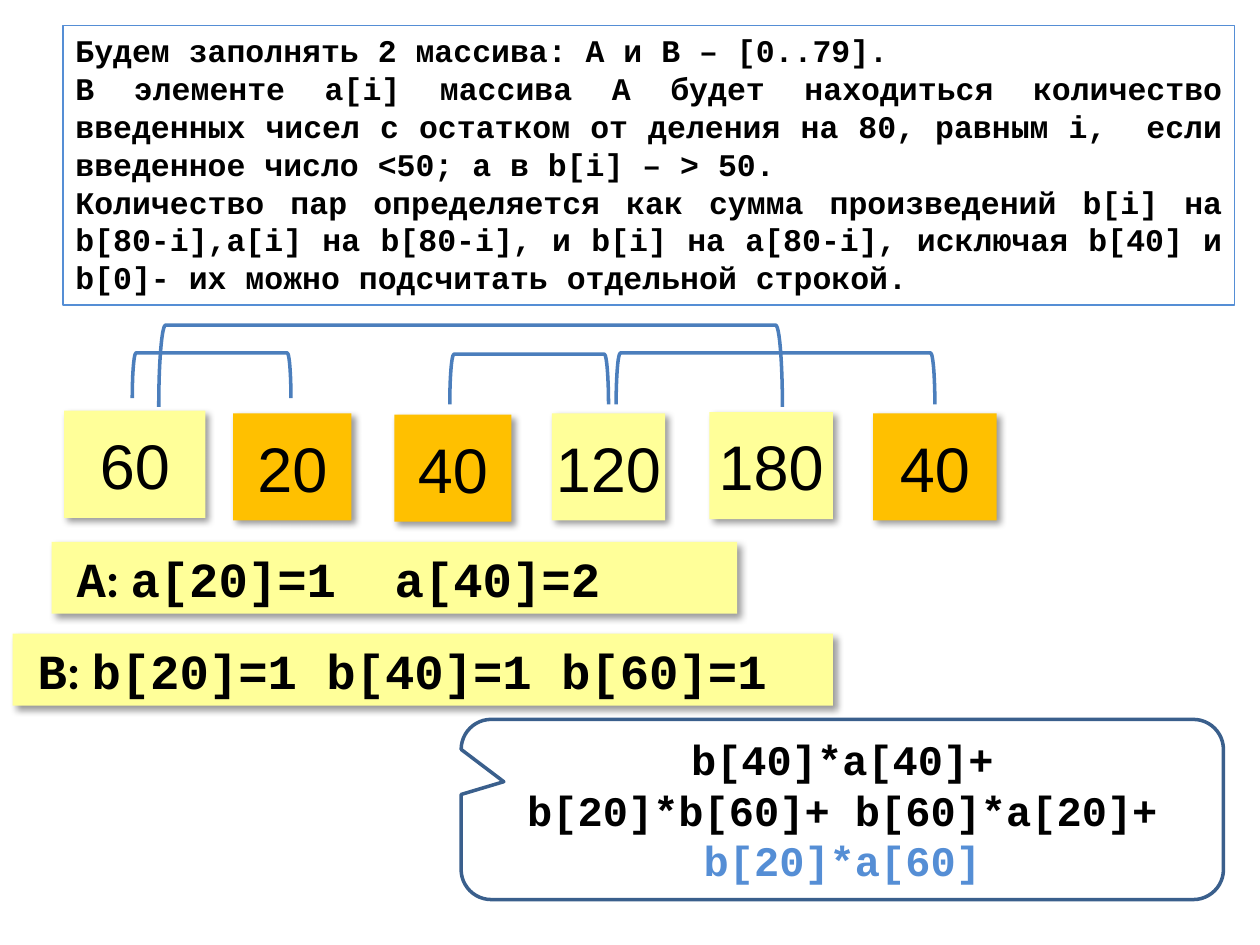
from lxml import etree
from pptx import Presentation
from pptx import util as u
from pptx.dml.color import RGBColor
from pptx.enum import shapes, text
from pptx.oxml.ns import qn

MONO = "Courier New"
YELLOW, ORANGE, BLUE = "FFFF99", "FFC000", "558ED5"
CENTER, JUSTIFY = text.PP_ALIGN.CENTER, text.PP_ALIGN.JUSTIFY
MIDDLE, TOP = text.MSO_ANCHOR.MIDDLE, text.MSO_ANCHOR.TOP


def color(value):
    return RGBColor.from_string(value)


def add_shape(slide, kind, box, fill=None, line=None, width=2):
    shape = slide.shapes.add_shape(kind, *(u.Inches(length) for length in box))
    shape.shadow.inherit = False
    if fill:
        shape.fill.solid()
        shape.fill.fore_color.rgb = color(fill)
    else:
        shape.fill.background()
    if line:
        shape.line.color.rgb = color(line)
        shape.line.width = u.Pt(width)
    else:
        shape.line.fill.background()
    return shape


def add_shadow(shape):
    """Soft black shadow falling to the lower right."""
    effects = shape._element.spPr.find(qn("a:effectLst"))
    shadow = etree.SubElement(
        effects, qn("a:outerShdw"), blurRad=str(u.Pt(4)), dist=str(u.Pt(3)),
        dir="2700000", algn="tl", rotWithShape="0")
    black = etree.SubElement(shadow, qn("a:srgbClr"), val="000000")
    etree.SubElement(black, qn("a:alpha"), val="40000")


def write(shape, paragraphs, size, font=MONO, bold=True, align=CENTER,
          anchor=MIDDLE, wrap=True, margin=0, indent=0):
    """Each paragraph is a list of runs: (words, format overrides)."""
    frame = shape.text_frame
    frame.word_wrap = wrap
    frame.vertical_anchor = anchor
    for index, runs in enumerate(paragraphs):
        paragraph = frame.add_paragraph() if index else frame.paragraphs[0]
        paragraph.alignment = align
        if margin:
            properties = paragraph._p.get_or_add_pPr()
            properties.set("marL", str(u.Inches(margin)))
            properties.set("indent", str(u.Inches(indent)))
        for words, changes in runs:
            run = paragraph.add_run()
            run.text = words
            run.font.name = changes.get("font", font)
            run.font.size = u.Pt(size)
            run.font.bold = bold
            run.font.color.rgb = color(changes.get("color", "000000"))


def add_explanation(slide, box):
    shape = add_shape(slide, shapes.MSO_SHAPE.RECTANGLE, box, line=BLUE, width=0.75)
    lines = [
        "Будем заполнять 2 массива: А и B – [0..79]. ",
        "В элементе a[i] массива А будет находиться количество введенных чисел "
        "с остатком от деления на 80, равным i,  если введенное число <50; "
        "а в b[i] – > 50.",
        "Количество пар определяется как сумма произведений b[i] на "
        "b[80-i],a[i] на b[80-i], и b[i] на a[80-i], исключая b[40] и b[0]- "
        "их можно подсчитать отдельной строкой.",
    ]
    write(shape, [[(line, {})] for line in lines], 18, align=JUSTIFY, anchor=TOP)


def add_callout(slide, box):
    shape = add_shape(slide, shapes.MSO_SHAPE.ROUNDED_RECTANGULAR_CALLOUT, box,
                      fill="FFFFFF", line="3A5F8C")
    for index, value in enumerate((-0.444, -0.154, 0.167)):
        shape.adjustments[index] = value
    write(shape, [[("b[40]*a[40]+", {})],
                  [("b[20]*b[60]+ b[60]*a[20]+", {})],
                  [("b[20]*a[60]", {"color": BLUE})]], 24)


def add_number(slide, box, number, fill):
    shape = add_shape(slide, shapes.MSO_SHAPE.RECTANGLE, box, fill=fill)
    add_shadow(shape)
    write(shape, [[(number, {})]], 36, font="Arial", bold=False, wrap=False)


def add_array(slide, box, name, values):
    shape = add_shape(slide, shapes.MSO_SHAPE.RECTANGLE, box, fill=YELLOW)
    add_shadow(shape)
    write(shape, [[(name, {}), (": ", {"font": "Calibri"}), (values, {})]], 28,
          align=JUSTIFY, margin=0.2, indent=-0.1)


def add_pair_bracket(slide, box):
    """A right bracket turned to open downwards, filling the visible box."""
    left, top, width, height = box
    turned = (left + (width - height) / 2, top + (height - width) / 2, height, width)
    shape = add_shape(slide, shapes.MSO_SHAPE.RIGHT_BRACKET, turned, line="4B7EBC")
    shape.rotation = 270


def main():
    presentation = Presentation()
    presentation.slide_width, presentation.slide_height = u.Inches(10), u.Inches(7.5)
    slide = presentation.slides.add_slide(presentation.slide_layouts[6])

    add_explanation(slide, (0.5, 0.2, 9.3, 2.22))
    add_callout(slide, (3.66, 5.71, 6.05, 1.43))

    # Input numbers
    for left, top, width, number, fill in (
            (0.51, 3.26, 1.12, "60", YELLOW),
            (1.85, 3.28, 0.94, "20", ORANGE),
            (3.13, 3.29, 0.93, "40", ORANGE),
            (4.38, 3.28, 0.9, "120", YELLOW),
            (5.63, 3.27, 0.98, "180", YELLOW),
            (6.93, 3.28, 0.98, "40", ORANGE)):
        add_number(slide, (left, top, width, 0.85), number, fill)

    # Counts in the two arrays
    add_array(slide, (0.41, 4.3, 5.44, 0.57), "A", "a[20]=1  a[40]=2")
    add_array(slide, (0.1, 5.03, 6.51, 0.57), "B", "b[20]=1 b[40]=1 b[60]=1")

    # Pairs of numbers whose sum is divisible by 80
    for box in ((1.05, 2.8, 1.26, 0.36), (3.57, 2.81, 1.26, 0.4),
                (4.89, 2.8, 2.53, 0.41), (1.26, 2.58, 4.95, 0.65)):
        add_pair_bracket(slide, box)

    presentation.save("out.pptx")


if __name__ == "__main__":
    main()
